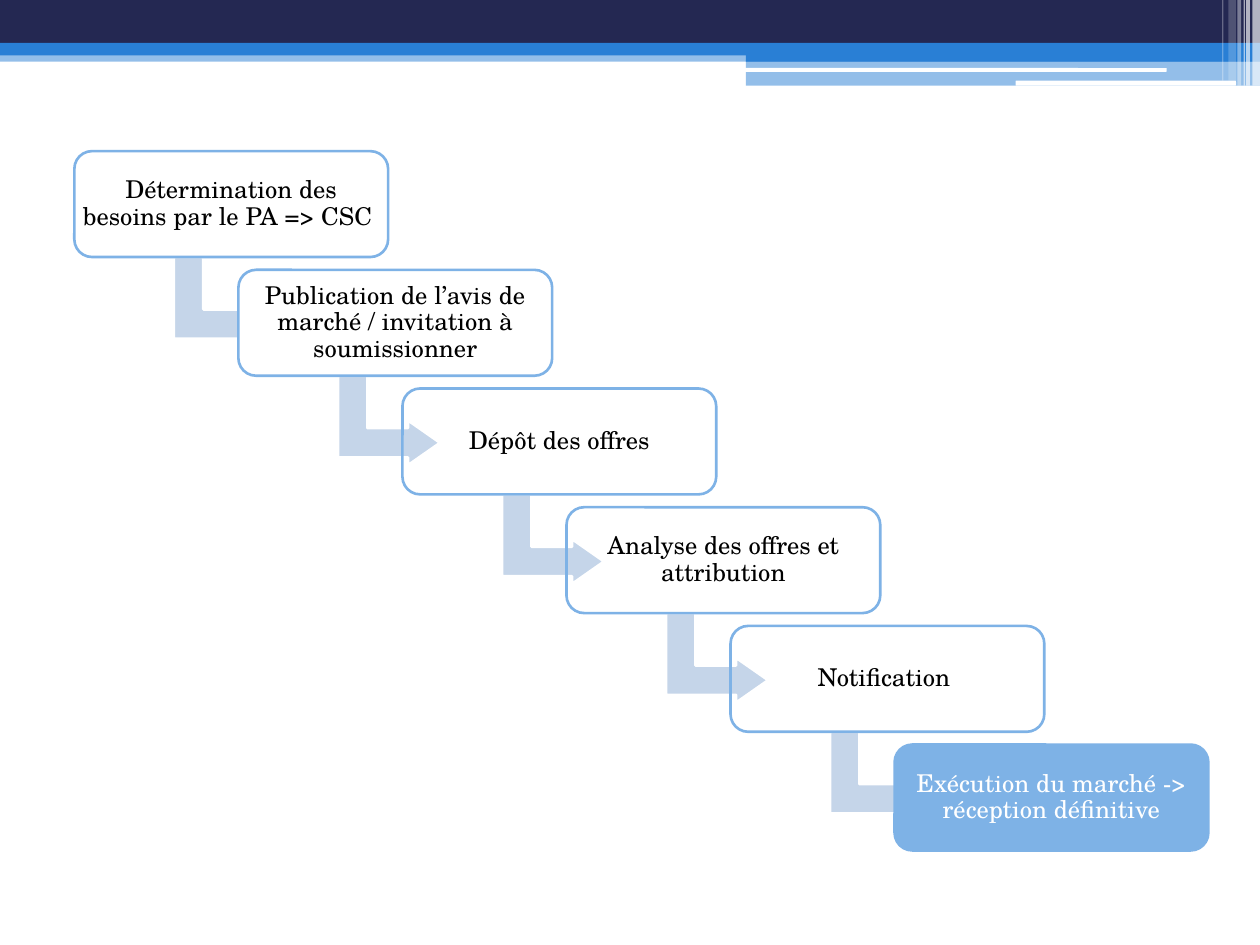
from lxml import etree
from pptx import Presentation
from pptx.dml.color import RGBColor
from pptx.enum.shapes import MSO_SHAPE
from pptx.enum.text import MSO_ANCHOR, PP_ALIGN
from pptx.oxml.ns import qn
from pptx.util import Inches, Pt

FONT = "TeX Gyre Schola"
NAVY, BLUE, SKY, PALE = "242852", "297FD5", "7EB2E6", "C5D5E9"
WHITE, BLACK = "FFFFFF", "000000"

# Steps of the procedure: text, fill, text colour
STEPS = [
    ("Détermination des besoins par le PA => CSC ", None, BLACK),
    ("Publication de l’avis de marché / invitation à soumissionner", WHITE, BLACK),
    ("Dépôt des offres", None, BLACK),
    ("Analyse des offres et attribution", None, BLACK),
    ("Notification ", None, BLACK),
    ("Exécution du marché -> réception définitive", SKY, WHITE),
]

# Header bands: left, top, width, height, colour, opacity in percent
BANDS = [
    (0, 0.4, 10, 0.09, BLUE, 50),
    (0, 0, 10, 0.34, NAVY, 100),
    (0, 0.34, 10, 0.1, BLUE, 100),
    (5.92, 0.39, 4.08, 0.1, BLUE, 100),
    (5.92, 0.48, 4.08, 0.2, BLUE, 50),
]
# White slits in the bands: left, top, width, height
SLITS = [(5.91, 0.54, 3.35, 0.03), (8.06, 0.64, 1.75, 0.04)]
# Stripes at the right edge: left, width, height, opacity in percent
STRIPES = [
    (9.94, 0.06, 0.68, 65), (9.89, 0.03, 0.68, 65), (9.87, 0.01, 0.68, 60),
    (9.82, 0.03, 0.68, 40), (9.75, 0.06, 0.64, 20), (9.7, 0.01, 0.64, 30),
]

# Staircase geometry, in inches
START_X, START_Y = 0.59, 1.2
STEP_X, STEP_Y = 1.302, 0.942
BOX_W, BOX_H = 2.49, 0.84
ARROW_DX, ARROW_DY = 0.84, 0.79
ARROW_W, ARROW_H = 0.71, 0.81


def rgb(color):
    return RGBColor.from_string(color)


def add_shape(kind, left, top, width, height, fill=None, line=None, opacity=100):
    shape = slide.shapes.add_shape(
        kind, Inches(left), Inches(top), Inches(width), Inches(height))
    shape.shadow.inherit = False
    if fill:
        shape.fill.solid()
        shape.fill.fore_color.rgb = rgb(fill)
        if opacity < 100:
            color = shape.fill._xPr.find(".//" + qn("a:srgbClr"))
            etree.SubElement(color, qn("a:alpha"), val=str(opacity * 1000))
    else:
        shape.fill.background()
    if line:
        shape.line.color.rgb = rgb(line)
        shape.line.width = Pt(1.5)
    else:
        shape.line.fill.background()
    return shape


def add_step(left, top, text, fill, color):
    box = add_shape(MSO_SHAPE.ROUNDED_RECTANGLE, left, top, BOX_W, BOX_H, fill, SKY)
    frame = box.text_frame
    frame.word_wrap = True
    frame.vertical_anchor = MSO_ANCHOR.MIDDLE
    frame.margin_left = frame.margin_right = Inches(0.02)
    frame.margin_top = frame.margin_bottom = Inches(0.02)
    frame.text = text
    paragraph = frame.paragraphs[0]
    paragraph.alignment = PP_ALIGN.CENTER
    paragraph.line_spacing = 0.9
    font = paragraph.runs[0].font
    font.name, font.size, font.color.rgb = FONT, Pt(14), rgb(color)


def add_arrow(left, top):
    arrow = add_shape(MSO_SHAPE.BENT_UP_ARROW, left, top, ARROW_W, ARROW_H, PALE, WHITE)
    arrow.rotation = 90
    for index, share in enumerate((0.328, 0.25, 0.358)):
        arrow.adjustments[index] = share


prs = Presentation()
prs.slide_width, prs.slide_height = Inches(10), Inches(7.5)
slide = prs.slides.add_slide(prs.slide_layouts[6])

# Header
for *place, color, opacity in BANDS:
    add_shape(MSO_SHAPE.RECTANGLE, *place, color, opacity=opacity)
for place in SLITS:
    add_shape(MSO_SHAPE.ROUNDED_RECTANGLE, *place, WHITE)
for left, width, height, opacity in STRIPES:
    add_shape(MSO_SHAPE.RECTANGLE, left, 0, width, height, WHITE, opacity=opacity)

# Staircase: each arrow lies behind the boxes it links
for number, step in enumerate(STEPS):
    left, top = START_X + number * STEP_X, START_Y + number * STEP_Y
    if number < len(STEPS) - 1:
        add_arrow(left + ARROW_DX, top + ARROW_DY)
    add_step(left, top, *step)

prs.save("out.pptx")
